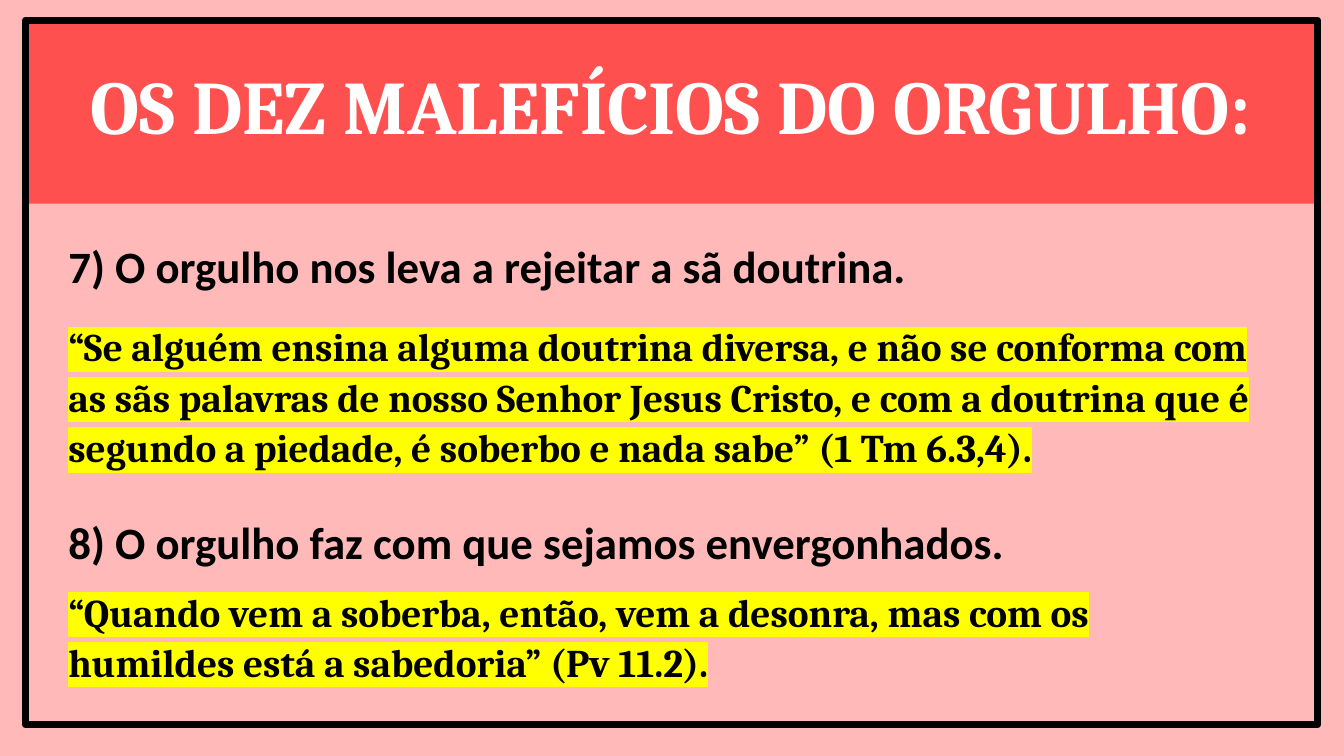
from lxml import etree
from pptx import Presentation
from pptx.dml.color import RGBColor
from pptx.enum.shapes import MSO_SHAPE
from pptx.enum.text import MSO_ANCHOR, PP_ALIGN
from pptx.oxml.ns import qn
from pptx.util import Inches, Pt

RECTANGLE = MSO_SHAPE.RECTANGLE
BOTTOM = MSO_ANCHOR.BOTTOM
CENTER = PP_ALIGN.CENTER

PINK = RGBColor(0xFF, 0xB9, 0xB9)
RED = RGBColor(0xFF, 0x50, 0x50)
BLACK = RGBColor(0, 0, 0)
WHITE = RGBColor(0xFF, 0xFF, 0xFF)
YELLOW = RGBColor(0xFF, 0xFF, 0)

TITLE = "OS DEZ MALEFÍCIOS DO ORGULHO:"
# (heading, heading top, verse, verse top, verse width)
HARMS = [
    ("7) O orgulho nos leva a rejeitar a sã doutrina.", 2.38,
     "“Se alguém ensina alguma doutrina diversa, e não se conforma com as sãs "
     "palavras de nosso Senhor Jesus Cristo, e com a doutrina que é segundo a "
     "piedade, é soberbo e nada sabe” (1 Tm 6.3,4).", 3.12, 12.09),
    ("8) O orgulho faz com que sejamos envergonhados.", 5.12,
     "“Quando vem a soberba, então, vem a desonra, mas com os humildes está a "
     "sabedoria” (Pv 11.2).", 5.75, 11.1),
]

SLIDE_WIDTH, SLIDE_HEIGHT = 13.33, 7.5
FRAME_LEFT, FRAME_TOP = 0.25, 0.2
TEXT_LEFT = 0.58
HEADING_WIDTH, HEADING_HEIGHT = 11.84, 0.74
VERSE_HEIGHT = 1.72


def add_rectangle(slide, left, top, width, height, fill=None):
    """Add a rectangle without outline; without a fill it is see-through."""
    rectangle = slide.shapes.add_shape(
        RECTANGLE, Inches(left), Inches(top), Inches(width), Inches(height))
    rectangle.shadow.inherit = False
    rectangle.line.fill.background()
    if fill is None:
        rectangle.fill.background()
    else:
        rectangle.fill.solid()
        rectangle.fill.fore_color.rgb = fill
    return rectangle


def write(frame, text, font, size, color, line_spacing):
    """Fill the frame with one bold paragraph and return that paragraph."""
    frame.word_wrap = True
    paragraph = frame.paragraphs[0]
    paragraph.add_run().text = text
    paragraph.line_spacing = line_spacing
    paragraph.font.name = font
    paragraph.font.size = Pt(size)
    paragraph.font.bold = True
    paragraph.font.color.rgb = color
    return paragraph


def add_text(slide, top, width, height, *style):
    box = slide.shapes.add_textbox(
        Inches(TEXT_LEFT), Inches(top), Inches(width), Inches(height))
    paragraph = write(box.text_frame, *style)
    paragraph.space_before = Pt(10)
    return paragraph


def highlight(paragraph, color):
    for run in paragraph.runs:
        properties = run._r.get_or_add_rPr()
        mark = etree.SubElement(properties, qn("a:highlight"))
        etree.SubElement(mark, qn("a:srgbClr"), val=str(color))


def main():
    prs = Presentation()
    prs.slide_width = Inches(SLIDE_WIDTH)
    prs.slide_height = Inches(SLIDE_HEIGHT)
    slide = prs.slides.add_slide(prs.slide_layouts[6])

    add_rectangle(slide, 0, 0, SLIDE_WIDTH, SLIDE_HEIGHT, PINK)

    banner = add_rectangle(slide, FRAME_LEFT, FRAME_TOP, 12.81, 1.82, RED)
    title_frame = banner.text_frame
    title_frame.vertical_anchor = BOTTOM
    title_frame.margin_bottom = Inches(0.52)
    title = write(title_frame, TITLE, "Cambria", 54, WHITE, 0.9)
    title.alignment = CENTER

    border = add_rectangle(slide, FRAME_LEFT, FRAME_TOP, 12.82, 6.99)
    border.line.color.rgb = BLACK
    border.line.width = Pt(5)

    for heading, heading_top, verse, verse_top, verse_width in HARMS:
        add_text(slide, heading_top, HEADING_WIDTH, HEADING_HEIGHT,
                 heading, "Calibri", 32, BLACK, 0.9)
        quote = add_text(slide, verse_top, verse_width, VERSE_HEIGHT,
                         verse, "Cambria", 28, BLACK, 1.07)
        quote.space_after = Pt(8)
        highlight(quote, YELLOW)

    prs.save("out.pptx")


if __name__ == "__main__":
    main()
